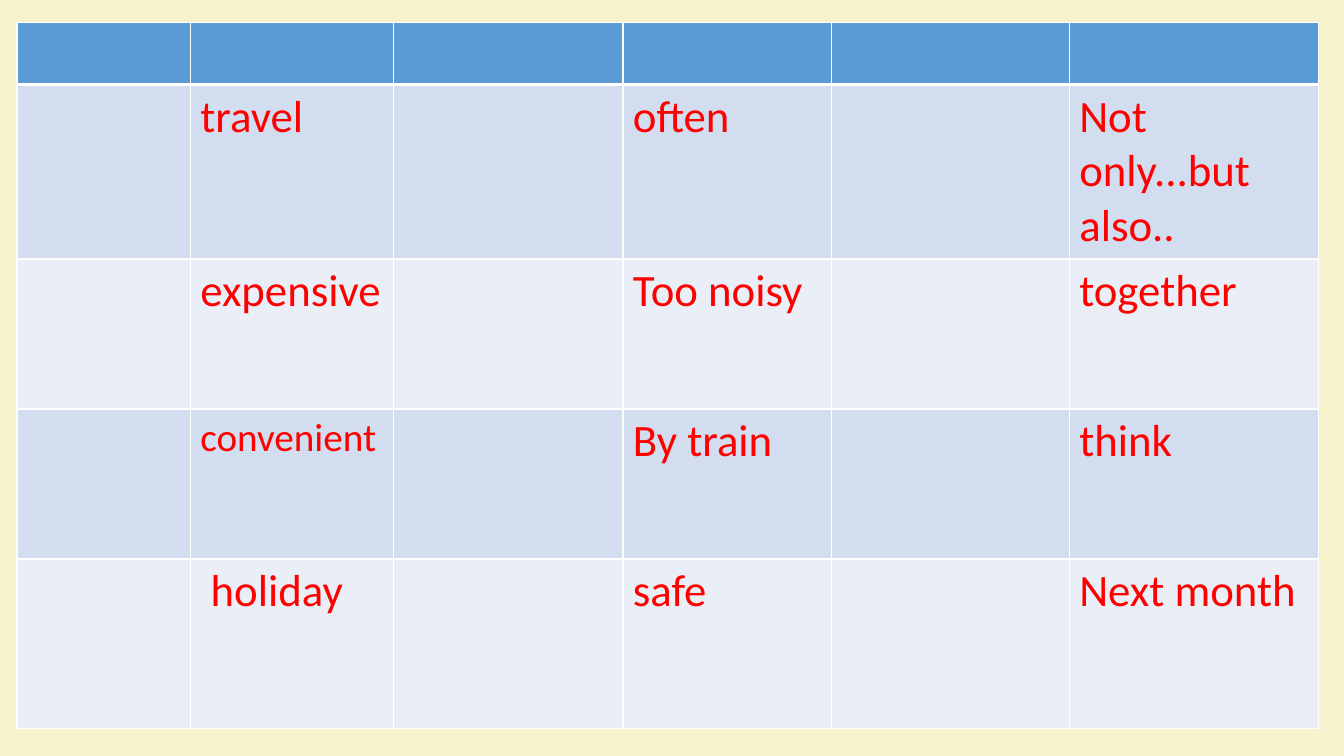
from typing import NamedTuple

from lxml import etree
from pptx import Presentation
from pptx.dml.color import RGBColor
from pptx.oxml.ns import qn
from pptx.table import Table, _Cell
from pptx.util import Cm, Pt

CREAM = RGBColor(0xF5, 0xF2, 0xCD)
BLUE = RGBColor(0x5B, 0x9B, 0xD5)
PALE = RGBColor(0xD2, 0xDE, 0xEF)
LIGHT = RGBColor(0xEA, 0xEF, 0xF7)
WHITE = RGBColor(0xFF, 0xFF, 0xFF)
RED = RGBColor(0xFF, 0x00, 0x00)

FONT = "Calibri"
WIDTHS = (4.37, 5.11, 5.79, 5.26, 5.99, 6.27)
HEIGHTS = (1.57, 4.27, 3.78, 3.78, 4.27)
THIN, THICK = 1, 3


class Word(NamedTuple):
    row: int
    col: int
    text: str
    size: int = 32
    inset: float = 0.25


WORDS = (
    Word(1, 1, "travel"),
    Word(1, 3, "often"),
    Word(1, 5, "Not only...but also.."),
    Word(2, 1, "expensive"),
    Word(2, 3, "Too noisy"),
    Word(2, 5, "together"),
    Word(3, 1, "convenient", size=28),
    Word(3, 3, "By train"),
    Word(3, 5, "think"),
    Word(4, 1, "holiday", inset=0.51),
    Word(4, 3, "safe"),
    Word(4, 5, "Next month"),
)


def add_edge(cell: _Cell, side: str, width: float) -> None:
    props = cell._tc.get_or_add_tcPr()
    line = etree.SubElement(props, qn(f"a:ln{side}"), w=str(Pt(width)))
    fill = etree.SubElement(line, qn("a:solidFill"))
    etree.SubElement(fill, qn("a:srgbClr"), val=str(WHITE))


def style_cell(cell: _Cell, row: int) -> None:
    """Draw the edges, with a thick rule under the header, then the band fill."""
    top = THICK if row == 1 else THIN
    base = THICK if row == 0 else THIN
    for side, width in (("L", THIN), ("R", THIN), ("T", top), ("B", base)):
        add_edge(cell, side, width)
    cell.fill.solid()
    band = PALE if row % 2 else LIGHT
    cell.fill.fore_color.rgb = band if row else BLUE


def write_word(table: Table, word: Word) -> None:
    cell = table.cell(word.row, word.col)
    cell.margin_left = Cm(word.inset)
    cell.text_frame.text = word.text
    font = cell.text_frame.paragraphs[0].runs[0].font
    font.name = FONT
    font.size = Pt(word.size)
    font.color.rgb = RED


def main() -> None:
    deck = Presentation()
    deck.slide_width, deck.slide_height = Cm(33.87), Cm(19.05)
    slide = deck.slides.add_slide(deck.slide_layouts[6])
    slide.background.fill.solid()
    slide.background.fill.fore_color.rgb = CREAM

    table = slide.shapes.add_table(
        len(HEIGHTS), len(WIDTHS), Cm(0.43), Cm(0.56),
        Cm(sum(WIDTHS)), Cm(sum(HEIGHTS)),
    ).table
    for column, width in zip(table.columns, WIDTHS):
        column.width = Cm(width)
    for index, (row, height) in enumerate(zip(table.rows, HEIGHTS)):
        row.height = Cm(height)
        for cell in row.cells:
            style_cell(cell, index)
    for word in WORDS:
        write_word(table, word)

    deck.save("out.pptx")


if __name__ == "__main__":
    main()
